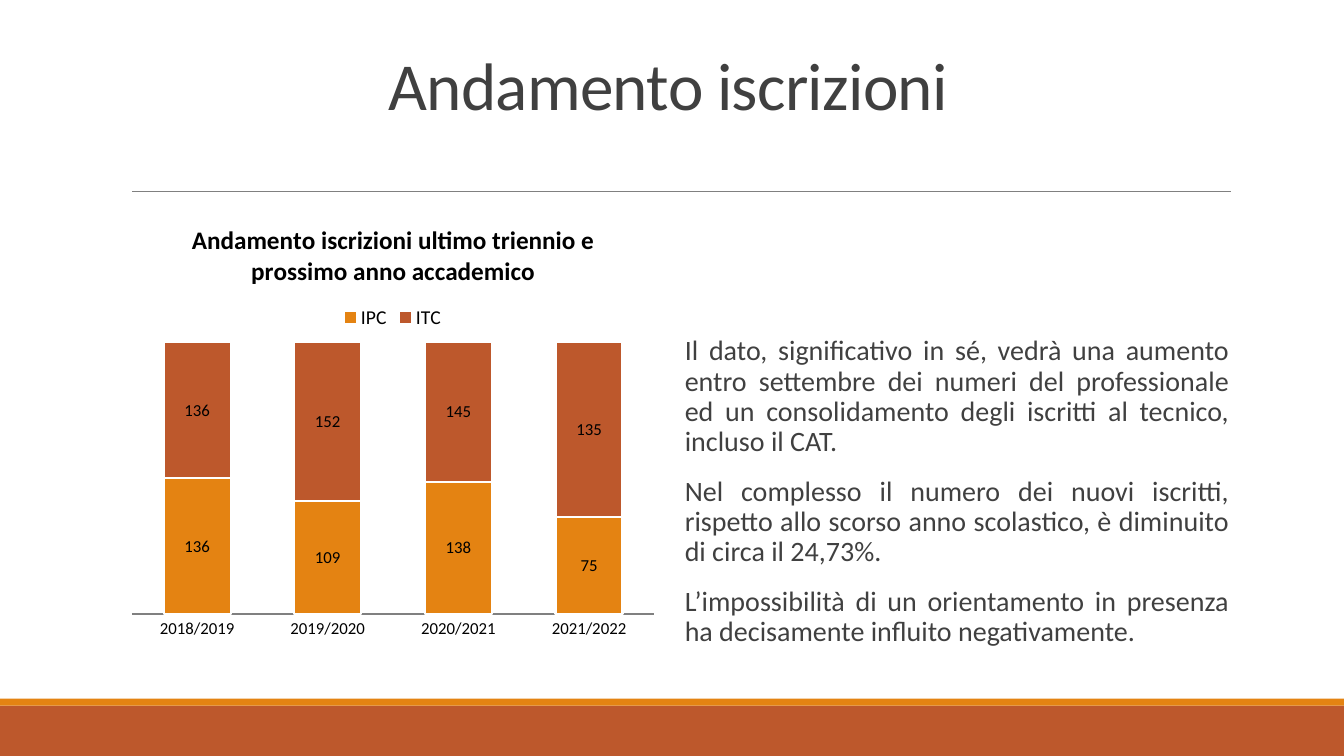
from lxml import etree
from pptx import Presentation
from pptx.chart.data import CategoryChartData
from pptx.dml.color import RGBColor
from pptx.enum.chart import XL_CHART_TYPE, XL_LABEL_POSITION, XL_LEGEND_POSITION, XL_TICK_MARK
from pptx.enum.shapes import MSO_CONNECTOR, MSO_SHAPE
from pptx.enum.text import MSO_ANCHOR, PP_ALIGN
from pptx.oxml.ns import qn
from pptx.util import Inches, Pt

STACKED = XL_CHART_TYPE.COLUMN_STACKED_100
CENTRED_LABEL = XL_LABEL_POSITION.CENTER
LEGEND_TOP = XL_LEGEND_POSITION.TOP
NO_TICK = XL_TICK_MARK.NONE
STRAIGHT = MSO_CONNECTOR.STRAIGHT
RECTANGLE = MSO_SHAPE.RECTANGLE
TOP, BOTTOM = MSO_ANCHOR.TOP, MSO_ANCHOR.BOTTOM
CENTER, JUSTIFY = PP_ALIGN.CENTER, PP_ALIGN.JUSTIFY

RUST = RGBColor(0xBD, 0x58, 0x2C)
ORANGE = RGBColor(0xE4, 0x83, 0x12)
GREY = RGBColor(0x80, 0x80, 0x80)
CHARCOAL = RGBColor(0x40, 0x40, 0x40)
BLACK = RGBColor(0, 0, 0)
WHITE = RGBColor(0xFF, 0xFF, 0xFF)

YEARS = ["2018/2019", "2019/2020", "2020/2021", "2021/2022"]
ENROLMENTS = [
    ("IPC", [136, 109, 138, 75], ORANGE),
    ("ITC", [136, 152, 145, 135], RUST),
]
COMMENTS = [
    "Il dato, significativo in sé, vedrà una aumento entro settembre dei numeri "
    "del professionale ed un consolidamento degli iscritti al tecnico, incluso il CAT.",
    "Nel complesso il numero dei nuovi iscritti, rispetto allo scorso anno scolastico, "
    "è diminuito di circa il 24,73%.",
    "L’impossibilità di un orientamento in presenza ha decisamente influito negativamente.",
]


class SlideBuilder:
    """Holds the style and the slide; lengths are percentages of its size."""

    font_name = "Calibri"

    def __init__(self, deck):
        self.width, self.height = deck.slide_width, deck.slide_height
        self.page = deck.slides.add_slide(deck.slide_layouts[6])

    def place(self, left, top, width, height):
        return (int(self.width * left / 100), int(self.height * top / 100),
                int(self.width * width / 100), int(self.height * height / 100))

    def style(self, font, size, color, bold=False):
        font.name, font.size, font.bold = self.font_name, Pt(size), bold
        font.color.rgb = color

    def band(self, area, color):
        band = self.page.shapes.add_shape(RECTANGLE, *self.place(*area))
        band.shadow.inherit = False
        band.fill.solid()
        band.fill.fore_color.rgb = color
        band.line.fill.background()

    def rule(self, left, right, top):
        x, y, length, _ = self.place(left, top, right - left, 0)
        rule = self.page.shapes.add_connector(STRAIGHT, x, y, x + length, y)
        rule.line.color.rgb = GREY
        rule.line.width = Pt(0.5)
        etree.SubElement(rule._element.spPr, qn("a:effectLst"))

    def text(self, area, paragraphs, size, align, anchor, side_inset=0.1,
             line_spacing=0.9, before=0, after=0, tracking=0):
        frame = self.page.shapes.add_textbox(*self.place(*area)).text_frame
        frame.word_wrap = True
        frame.vertical_anchor = anchor
        frame.margin_left = frame.margin_right = Inches(side_inset)
        for index, words in enumerate(paragraphs):
            para = frame.add_paragraph() if index else frame.paragraphs[0]
            para.alignment = align
            para.line_spacing = line_spacing
            para.space_before, para.space_after = Pt(before), Pt(after)
            span = para.add_run()
            span.text = words
            self.style(span.font, size, CHARCOAL)
            if tracking:
                span.font._element.set("spc", str(int(tracking * 100)))

    def stacked_chart(self, area, title, categories, rows):
        data = CategoryChartData()
        data.categories = categories
        for name, values, _ in rows:
            data.add_series(name, values)
        chart = self.page.shapes.add_chart(STACKED, *self.place(*area), data).chart
        self.style(chart.font, 18, BLACK)

        # Title and legend
        chart.has_title = True
        span = chart.chart_title.text_frame.paragraphs[0].add_run()
        span.text = title
        self.style(span.font, 18, BLACK, bold=True)
        chart.chart_title.include_in_layout = False
        chart.has_legend = True
        chart.legend.position = LEGEND_TOP
        chart.legend.include_in_layout = False
        self.style(chart.legend.font, 14, BLACK)

        # Axes
        years = chart.category_axis
        years.major_tick_mark = years.minor_tick_mark = NO_TICK
        years.format.line.color.rgb = GREY
        years.format.line.width = Pt(1.5)
        self.style(years.tick_labels.font, 12, BLACK)
        chart.value_axis.has_major_gridlines = False
        chart.value_axis.visible = False

        # Columns and their values
        plot = chart.plots[0]
        plot.gap_width, plot.overlap = 95, 100
        plot.vary_by_categories = False
        for series, (_, _, color) in zip(plot.series, rows):
            series.format.fill.solid()
            series.format.fill.fore_color.rgb = color
            series.format.line.color.rgb = WHITE
            series.format.line.width = Pt(1.5)
            labels = series.data_labels
            labels.show_value = True
            labels.position = CENTRED_LABEL
            self.style(labels.font, 12, BLACK)


def main():
    deck = Presentation()
    deck.slide_width, deck.slide_height = Inches(13.33), Inches(7.5)
    slide = SlideBuilder(deck)

    # Footer bands and rule under the heading
    slide.band((0, 93.33, 100, 6.67), RUST)
    slide.band((0, 92.4, 100, 0.93), ORANGE)
    slide.rule(9.83, 91.6, 25.33)

    # Heading
    slide.text((9, 4.13, 82.5, 12.93), ["Andamento iscrizioni "], 48, CENTER, BOTTOM,
               line_spacing=0.85, tracking=-0.5)

    # Comments on the right
    slide.text((50.95, 43.87, 40.5, 43.33), COMMENTS, 20, JUSTIFY, TOP,
               side_inset=0, before=12, after=2)

    # Enrolment chart on the left
    slide.stacked_chart((9, 26.93, 40.5, 58.67),
                        "Andamento iscrizioni ultimo triennio e prossimo anno accademico",
                        YEARS, ENROLMENTS)
    deck.save("out.pptx")


if __name__ == "__main__":
    main()
